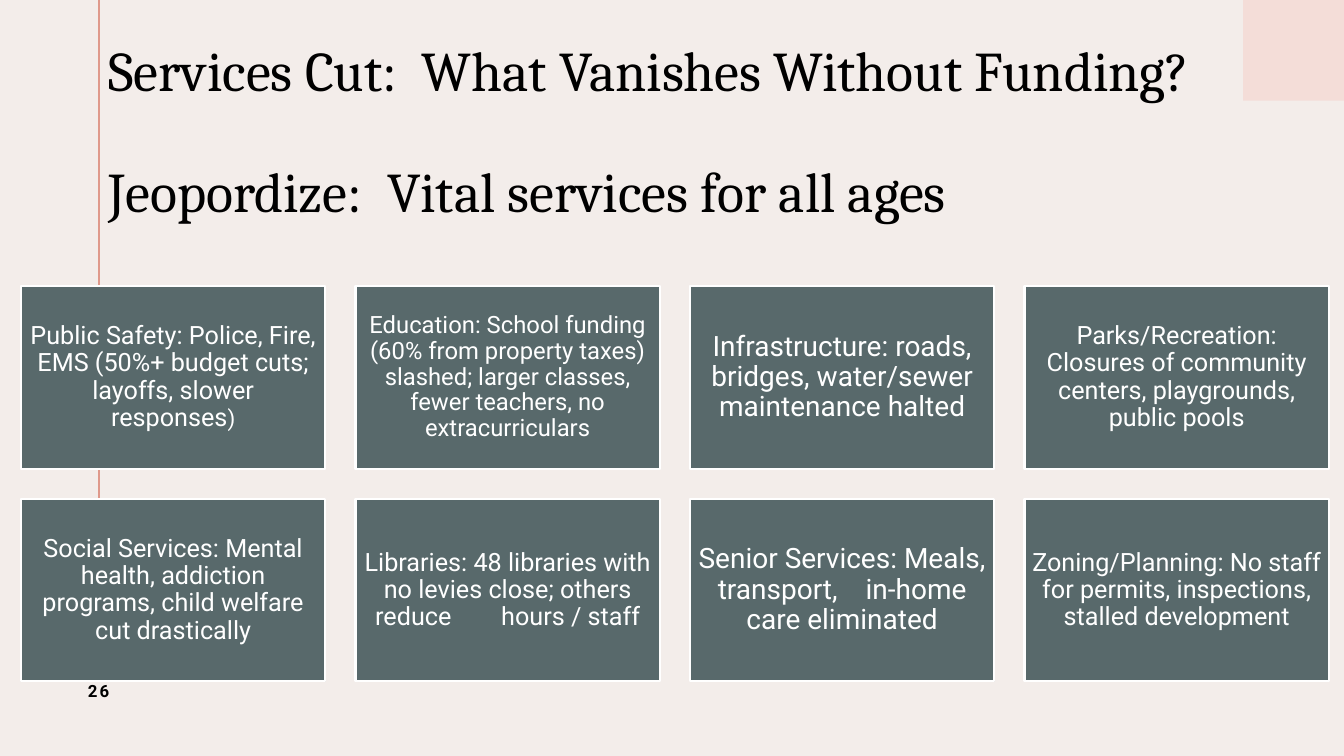
import pptx
import pptx.dml.color
import pptx.enum.shapes
import pptx.enum.text
import pptx.util
from lxml import etree
from pptx.dml.color import RGBColor
from pptx.enum.shapes import MSO_CONNECTOR, MSO_SHAPE
from pptx.enum.text import MSO_ANCHOR, PP_ALIGN
from pptx.oxml.ns import qn
from pptx.util import Cm, Pt

# A run is (text, size in points, letter spacing in points).
TITLE_SIZE = 40
TITLE_GAP = (" ", TITLE_SIZE, 8.8)
TITLE = [
    [("Services Cut:", TITLE_SIZE, 0), TITLE_GAP,
     ("What Vanishes Without Funding?", TITLE_SIZE, 0)],
    [("Jeopordize:", TITLE_SIZE, 0), TITLE_GAP,
     ("Vital services for all ages", TITLE_SIZE, 0)],
]
PAGE_NUMBER = [("26", 12, 1.5)]
SERVICES = [
    [
        [("Public Safety: Police, Fire, EMS (50%+ budget cuts; layoffs, "
          "slower responses", 18, 0), (")", 16, 0)],
        [("Education: School funding (60% from property taxes) slashed; "
          "larger classes, fewer teachers, no extracurriculars", 17, 0)],
        [("Infrastructure: roads, bridges, water/sewer maintenance halted",
          20, 0)],
        [("Parks/Recreation: Closures of community centers, playgrounds, "
          "public pools", 18, 0)],
    ],
    [
        [("Social Services: Mental health, addiction programs, child welfare "
          "cut drastically", 18, 0)],
        [("Libraries: 48 libraries with no levies close; others reduce", 18, 0),
         (" ", 18, 31), ("hours / staff", 18, 0)],
        [("Senior Services: Meals, transport,", 20, 0), (" ", 20, 15),
         ("in-home care eliminated", 20, 0)],
        [("Zoning/Planning: No staff for permits, inspections, stalled "
          "development", 18, 0)],
    ],
]

HEADING_FONT, BODY_FONT = "Cambria", "Roboto"
CREAM = RGBColor(0xF3, 0xED, 0xEA)
BLUSH = RGBColor(0xF4, 0xDD, 0xD8)
CORAL = RGBColor(0xDF, 0x99, 0x8B)
SLATE = RGBColor(0x58, 0x69, 0x6B)
WHITE = RGBColor(0xFF, 0xFF, 0xFF)
BLACK = RGBColor(0x00, 0x00, 0x00)

SLIDE_W, SLIDE_H = 33.87, 19.05
CORNER = 2.54
RULE_X, RULE_BOTTOM = 2.49, 16.51
CARD_LEFT, CARD_TOP = 0.53, 7.21
CARD_W, CARD_H = 7.67, 4.6
CARD_GAP = 0.76


def add_runs(paragraph, runs, font, color, bold=False):
    for text, size, tracking in runs:
        run = paragraph.add_run()
        run.text = text
        run.font.name = font
        run.font.size = Pt(size)
        run.font.bold = bold
        run.font.color.rgb = color
        if tracking:
            run._r.get_or_add_rPr().set("spc", str(round(tracking * 100)))


def set_frame(frame, left, top, right, bottom):
    """Wrap the text, centre it vertically and set its margins in cm."""
    frame.word_wrap = True
    frame.vertical_anchor = MSO_ANCHOR.MIDDLE
    frame.margin_left, frame.margin_top = Cm(left), Cm(top)
    frame.margin_right, frame.margin_bottom = Cm(right), Cm(bottom)


def add_box(slide, left, top, width, height, fill):
    box = slide.shapes.add_shape(
        MSO_SHAPE.RECTANGLE, Cm(left), Cm(top), Cm(width), Cm(height))
    box.shadow.inherit = False
    box.fill.solid()
    box.fill.fore_color.rgb = fill
    box.line.fill.background()
    return box


def add_decoration(slide):
    add_box(slide, SLIDE_W - CORNER, 0, CORNER, CORNER, BLUSH)
    rule = slide.shapes.add_connector(
        MSO_CONNECTOR.STRAIGHT, Cm(RULE_X), Cm(0), Cm(RULE_X), Cm(RULE_BOTTOM))
    rule.line.color.rgb = CORAL
    rule.line.width = Pt(1.5)
    etree.SubElement(rule._element.spPr, qn("a:effectLst"))


def add_title(slide):
    title = slide.shapes.add_textbox(Cm(2.74), Cm(1.4), Cm(30.76), Cm(3.96))
    frame = title.text_frame
    set_frame(frame, 0, 0.13, 0.25, 0.13)
    for index, runs in enumerate(TITLE):
        line = frame.add_paragraph() if index else frame.paragraphs[0]
        line.line_spacing = 0.9
        if index:
            line.space_before = Pt(43)
        add_runs(line, runs, HEADING_FONT, BLACK)


def add_page_number(slide):
    number = slide.shapes.add_textbox(Cm(1.14), Cm(16.51), Cm(2.69), Cm(1.8))
    set_frame(number.text_frame, 0.25, 0.13, 0.25, 0.13)
    paragraph = number.text_frame.paragraphs[0]
    paragraph.alignment = PP_ALIGN.CENTER
    paragraph.space_after = Pt(6)
    add_runs(paragraph, PAGE_NUMBER, BODY_FONT, BLACK, bold=True)


def add_service_cards(slide):
    for row, services in enumerate(SERVICES):
        for column, runs in enumerate(services):
            card = add_box(
                slide,
                CARD_LEFT + column * (CARD_W + CARD_GAP),
                CARD_TOP + row * (CARD_H + CARD_GAP),
                CARD_W, CARD_H, SLATE)
            card.line.color.rgb = WHITE
            card.line.width = Pt(1.5)
            margin = 0.2 if runs[0][1] == 20 else 0.18
            set_frame(card.text_frame, margin, margin, margin, margin)
            paragraph = card.text_frame.paragraphs[0]
            paragraph.alignment = PP_ALIGN.CENTER
            paragraph.line_spacing = 0.9
            add_runs(paragraph, runs, BODY_FONT, WHITE)


def main():
    deck = pptx.Presentation()
    deck.slide_width, deck.slide_height = Cm(SLIDE_W), Cm(SLIDE_H)
    slide = deck.slides.add_slide(deck.slide_layouts[6])
    slide.background.fill.solid()
    slide.background.fill.fore_color.rgb = CREAM
    add_decoration(slide)
    add_title(slide)
    add_page_number(slide)
    add_service_cards(slide)
    deck.save("out.pptx")


if __name__ == "__main__":
    main()
